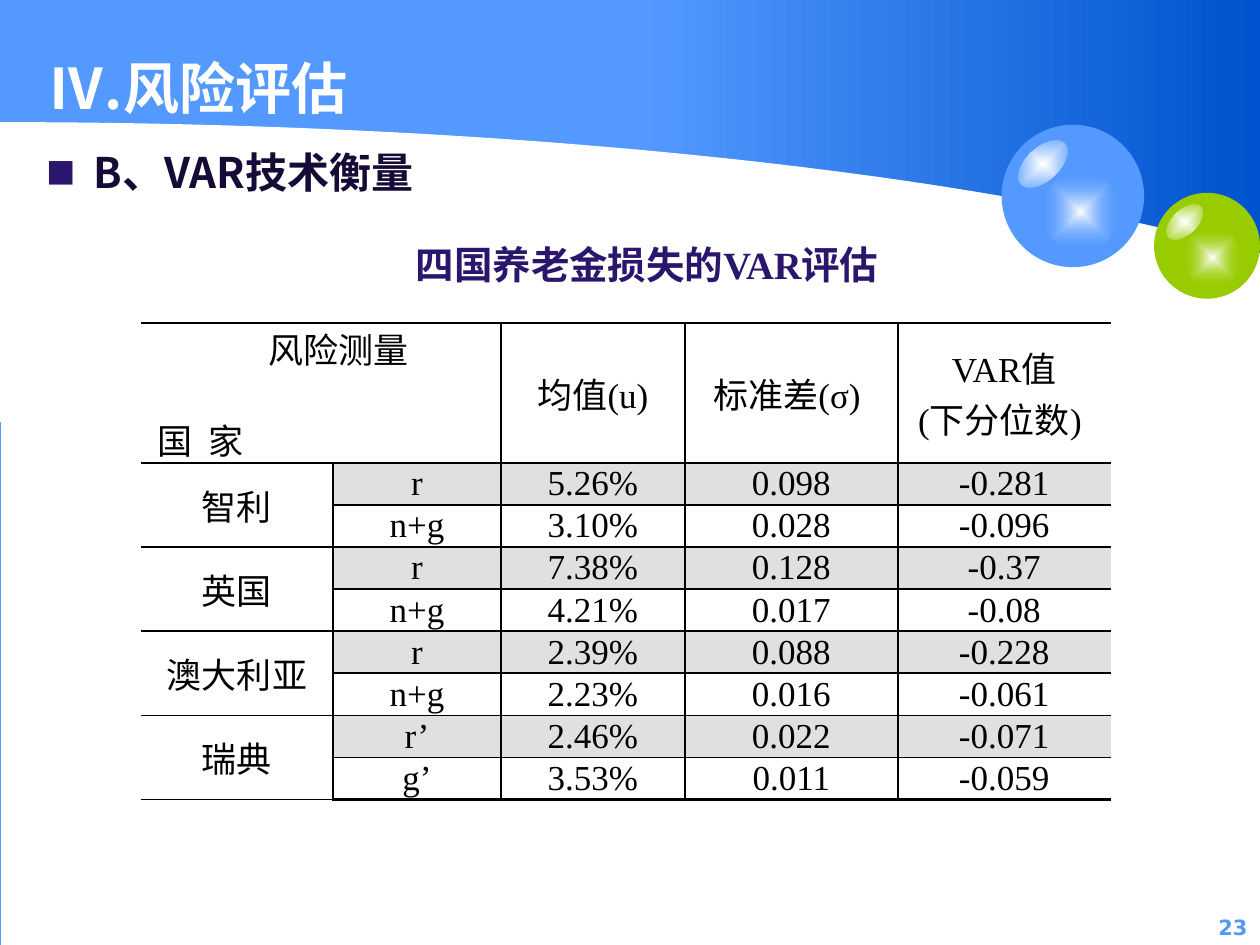
import pptx
import pptx.dml.color
import pptx.enum.shapes
import pptx.enum.text
import pptx.oxml
import pptx.oxml.ns
import pptx.util
from lxml import etree

Pt = pptx.util.Pt
Shape = pptx.enum.shapes.MSO_SHAPE
Align = pptx.enum.text.PP_ALIGN
Anchor = pptx.enum.text.MSO_ANCHOR
qn = pptx.oxml.ns.qn
NS = pptx.oxml.ns.nsdecls("a")

COLORS = {
    "sky": "5399FF", "deep": "0053CE", "white": "FFFFFF", "lime": "99CC00",
    "indigo": "2B166E", "night": "160B37", "black": "000000", "band": "E0E0E0",
}
SANS = "Noto Sans CJK SC"
SERIF = "Times New Roman"

COLUMN_WIDTHS = [109.7, 96, 105.1, 121.7, 121.7]
HEADER_HEIGHT, ROW_HEIGHT = 80, 23.55
COUNTRIES = [
    ("智利", ("r", "5.26%", "0.098", "-0.281"), ("n+g", "3.10%", "0.028", "-0.096")),
    ("英国", ("r", "7.38%", "0.128", "-0.37"), ("n+g", "4.21%", "0.017", "-0.08")),
    ("澳大利亚", ("r", "2.39%", "0.088", "-0.228"), ("n+g", "2.23%", "0.016", "-0.061")),
    ("瑞典", ("r’", "2.46%", "0.022", "-0.071"), ("g’", "3.53%", "0.011", "-0.059")),
]


def rgb(color):
    return pptx.dml.color.RGBColor.from_string(COLORS[color])


def fill_plain(shape, color):
    shape.shadow.inherit = False
    shape.fill.solid()
    shape.fill.fore_color.rgb = rgb(color)
    shape.line.fill.background()


def fill_gradient(shape, start, end, direction, end_alpha=100):
    fill_plain(shape, start)
    gradient = etree.fromstring(
        f'<a:gradFill {NS} rotWithShape="1"><a:gsLst>'
        f'<a:gs pos="0"><a:srgbClr val="{COLORS[start]}"/></a:gs>'
        f'<a:gs pos="100000"><a:srgbClr val="{COLORS[end]}">'
        f'<a:alpha val="{end_alpha * 1000}"/></a:srgbClr></a:gs>'
        f'</a:gsLst>{direction}</a:gradFill>')
    properties = shape.element.spPr
    properties.replace(properties.find(qn("a:solidFill")), gradient)


def add_run(paragraph, text, size, font, color, bold=False):
    run = paragraph.add_run()
    run.text = text
    run.font.size = Pt(size)
    run.font.bold = bold
    run.font.color.rgb = rgb(color)
    run.font.name = font
    east_asian = etree.SubElement(run.font._element, qn("a:ea"))
    east_asian.set("typeface", font if font != SERIF else SANS)
    return run


def add_line(slide, box, text, size, font, color, align, anchor):
    frame = slide.shapes.add_textbox(*map(Pt, box)).text_frame
    frame.word_wrap = True
    frame.vertical_anchor = anchor
    frame.margin_top = frame.margin_bottom = 0
    paragraph = frame.paragraphs[0]
    paragraph.alignment = align
    add_run(paragraph, text, size, font, color, True)
    return paragraph


def add_backdrop(slide, width, height):
    slide.background.fill.solid()
    slide.background.fill.fore_color.rgb = rgb("sky")
    banner = slide.shapes.add_shape(Shape.RECTANGLE, Pt(365), 0, Pt(width - 365), Pt(214))
    fill_gradient(banner, "sky", "deep", '<a:lin ang="0" scaled="1"/>')
    page = slide.shapes.add_shape(
        Shape.RECTANGLE, Pt(0.7), Pt(144.7), Pt(width - 0.7), Pt(height - 144.7))
    fill_plain(page, "white")

    controls = [(0, 69.8), (288.7, 69.8), (559.4, 97.9), (721.4, 145.4)]
    steps = 60
    curve = []
    for step in range(steps + 1):
        t = step / steps
        weights = [(1 - t) ** 3, 3 * t * (1 - t) ** 2, 3 * t * t * (1 - t), t ** 3]
        curve.append(tuple(
            Pt(sum(w * point[axis] for w, point in zip(weights, controls)))
            for axis in (0, 1)))
    builder = slide.shapes.build_freeform(*curve[0], scale=1.0)
    builder.add_line_segments(curve[1:] + [(0, Pt(241.2))], close=True)
    fill_plain(builder.convert_to_shape(), "white")


def add_ball(slide, left, top, size, color):
    def add_oval(x, y, width, height):
        return slide.shapes.add_shape(
            Shape.OVAL, Pt(left + x * size), Pt(top + y * size),
            Pt(width * size), Pt(height * size))

    center = ('<a:path path="shape"><a:fillToRect l="50000" t="50000" '
              'r="50000" b="50000"/></a:path>')
    fill_plain(add_oval(0, 0, 1, 1), color)
    fill_gradient(add_oval(0.27, 0.33, 0.56, 0.56), "white", color, center, 0)
    glint = add_oval(0.08, 0.16, 0.42, 0.23)
    glint.rotation = 317.2
    fill_gradient(glint, "white", color, center)


def add_heading(slide, left, top, width):
    add_line(slide, (left, top, width, 51.8), "Ⅳ.风险评估", 32, SANS, "white",
             Align.LEFT, Anchor.BOTTOM)
    topic = add_line(slide, (left - 1.4, top + 66.2, width + 15, 40), "B、VAR技术衡量",
                     24, SANS, "night", Align.LEFT, Anchor.TOP)
    properties = topic._p.get_or_add_pPr()
    properties.set("marL", str(Pt(27)))
    properties.set("indent", str(Pt(-27)))
    for bullet in (f'<a:buClr {NS}><a:srgbClr val="{COLORS["indigo"]}"/></a:buClr>',
                   f'<a:buSzPct {NS} val="70000"/>',
                   f'<a:buFont {NS} typeface="{SANS}"/>',
                   f'<a:buChar {NS} char="■"/>'):
        properties.append(etree.fromstring(bullet))


def set_borders(cell, edges):
    properties = cell._tc.get_or_add_tcPr()
    for index, (side, weight) in enumerate(edges.items()):
        paint = (f'<a:solidFill><a:srgbClr val="{COLORS["black"]}"/></a:solidFill>'
                 if weight else '<a:noFill/>')
        properties.insert(index, etree.fromstring(
            f'<a:ln{side} {NS} w="{Pt(weight)}">{paint}</a:ln{side}>'))


def write_cell(cell, *lines):
    for index, line in enumerate(lines):
        frame = cell.text_frame
        paragraph = frame.paragraphs[0] if index == 0 else frame.add_paragraph()
        paragraph.alignment = Align.CENTER
        add_run(paragraph, line, 20, SERIF, "black")
    return cell.text_frame.paragraphs


def add_risk_table(slide, left, top):
    row_count = 1 + 2 * len(COUNTRIES)
    column_count = len(COLUMN_WIDTHS)
    table = slide.shapes.add_table(
        row_count, column_count, Pt(left), Pt(top), Pt(sum(COLUMN_WIDTHS)),
        Pt(HEADER_HEIGHT + ROW_HEIGHT * (row_count - 1))).table
    table.first_row = table.horz_banding = False
    for column, width in zip(table.columns, COLUMN_WIDTHS):
        column.width = Pt(width)
    for r, row in enumerate(table.rows):
        row.height = Pt(ROW_HEIGHT if r else HEADER_HEIGHT)
        for c, cell in enumerate(row.cells):
            cell.vertical_anchor = Anchor.MIDDLE
            cell.margin_left = cell.margin_right = Pt(5)
            cell.margin_top = cell.margin_bottom = 0
            if r % 2 and c:
                cell.fill.solid()
                cell.fill.fore_color.rgb = rgb("band")
            else:
                cell.fill.background()
            set_borders(cell, {"L": 1 if c else 0,
                               "R": 1 if c < column_count - 1 else 0,
                               "T": 1 if r else 1.5,
                               "B": 1 if r < row_count - 1 else 1.5})

    table.cell(0, 0).merge(table.cell(0, 1))
    measure, country_label = write_cell(table.cell(0, 0), "风险测量", "国")
    measure._p.get_or_add_pPr().set("marL", str(Pt(20)))
    country_label.alignment = Align.LEFT
    country_label.space_before = Pt(23)
    country_label._p.get_or_add_pPr().set("indent", str(Pt(4.3)))
    gap = add_run(country_label, " ", 20, SERIF, "black")
    gap.font._element.set("spc", "500")
    add_run(country_label, "家", 20, SERIF, "black")
    write_cell(table.cell(0, 2), "均值(u)")
    deviation = write_cell(table.cell(0, 3), "标准差(σ)")[0]
    quantile = write_cell(table.cell(0, 4), "VAR值", "(下分位数)")[1]
    for paragraph in (deviation, quantile):
        paragraph._p.get_or_add_pPr().set("marR", str(Pt(5)))

    for index, (country, *measures) in enumerate(COUNTRIES):
        first = 1 + 2 * index
        table.cell(first, 0).merge(table.cell(first + 1, 0))
        write_cell(table.cell(first, 0), country)
        for r, values in enumerate(measures, first):
            for c, value in enumerate(values, 1):
                write_cell(table.cell(r, c), value)


def main():
    deck = pptx.Presentation()
    deck.slide_width, deck.slide_height = Pt(720), Pt(540)
    slide = deck.slides.add_slide(deck.slide_layouts[6])
    add_backdrop(slide, 720, 540)
    add_ball(slide, 659.5, 110.2, 60.5, "lime")
    add_ball(slide, 572.4, 71.3, 81.4, "sky")
    add_line(slide, (491.8, 517.7, 228.2, 23.8), "23", 12, "DejaVu Sans", "sky",
             Align.RIGHT, Anchor.MIDDLE)
    add_heading(slide, 20.9, 17.3, 658)
    add_risk_table(slide, 80.6, 184.5)
    add_line(slide, (167.8, 137.5, 403.9, 60.5), "四国养老金损失的VAR评估", 22, SERIF,
             "indigo", Align.CENTER, Anchor.TOP)
    deck.save("out.pptx")


if __name__ == "__main__":
    main()
